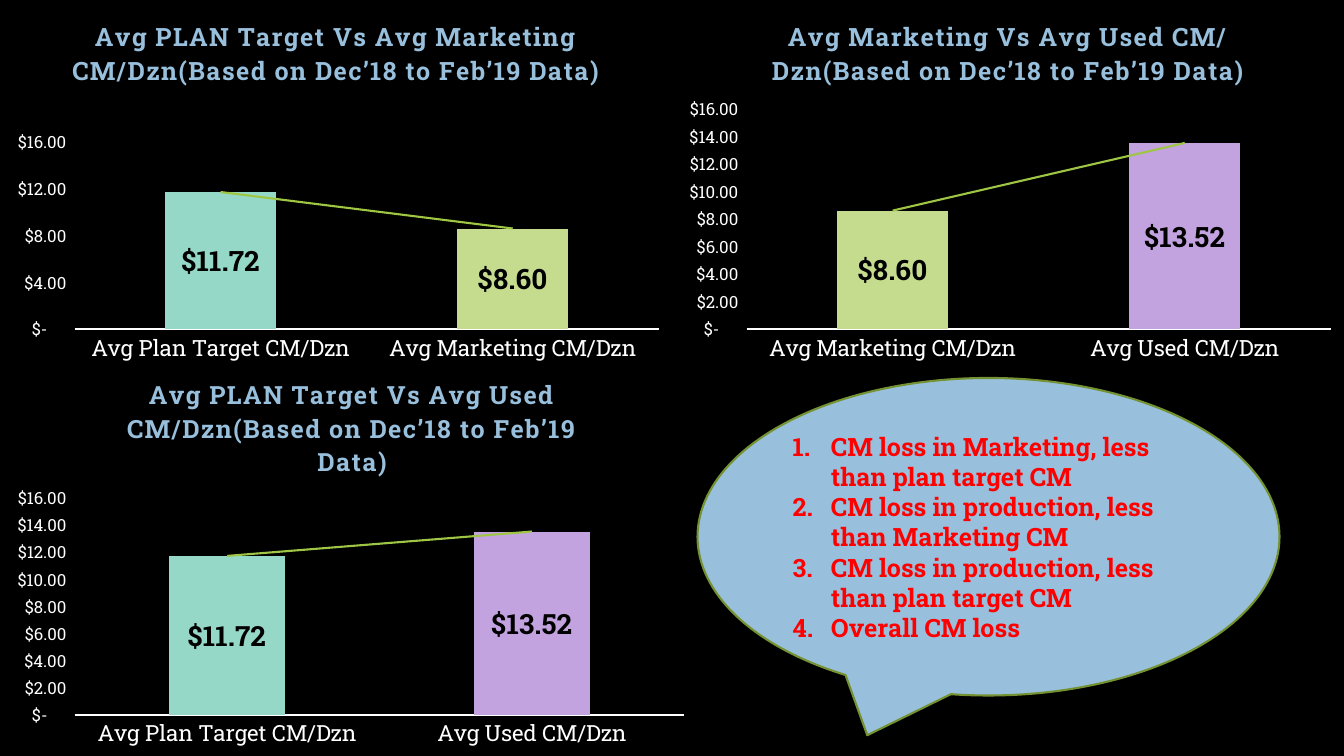
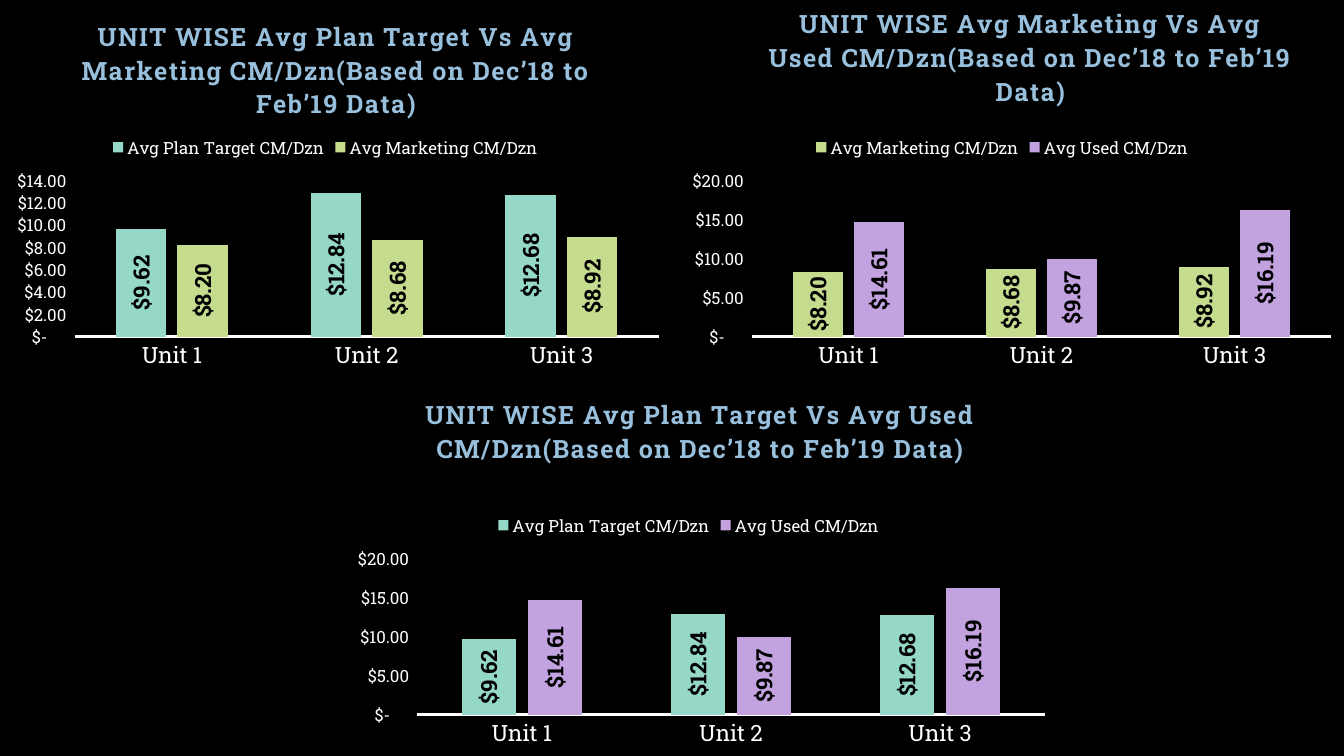
from pptx import Presentation
from pptx.chart.data import CategoryChartData as Data
from pptx.dml.color import RGBColor
from pptx.enum.chart import XL_CHART_TYPE as Kind, XL_LABEL_POSITION as Spot
from pptx.enum.chart import XL_LEGEND_POSITION as Side, XL_TICK_MARK as Tick
from pptx.enum.shapes import MSO_SHAPE as Form
from pptx.enum.text import MSO_ANCHOR as Anchor, PP_ALIGN as Align
from pptx.oxml import parse_xml
from pptx.oxml.ns import nsdecls, qn
from pptx.util import Inches, Pt

WIDE, HIGH = 13.33, 7.5
MONEY = r'_("$"* #,##0.00_);_("$"* \(#,##0.00\);_("$"* "-"??_);_(@_)'

# Measures: one colour and one name each
PLAN = ("Avg Plan Target CM/Dzn", "96D8C8")
MARKET = ("Avg Marketing CM/Dzn", "C5DC8F")
USED = ("Avg Used CM/Dzn", "C2A3DF")
MEAN = {PLAN: 11.72, MARKET: 8.6, USED: 13.52}
UNITS = ["Unit 1", "Unit 2", "Unit 3"]
SPLIT = {
    PLAN: (9.62, 12.84, 12.68),
    MARKET: (8.2, 8.68, 8.92),
    USED: (14.61, 9.87, 16.19),
}
SPAN = "CM/Dzn(Based on Dec’18 to Feb’19 Data)"


def rgb(code):
    return RGBColor.from_string(code)


def put(item, **vals):
    for key, val in vals.items():
        setattr(item, key, val)


def place(node, inner=False, **spots):
    """Fix the place of a chart part, in shares of the chart."""
    for old in node.findall(qn("c:layout")):
        node.remove(old)
    target = '<c:layoutTarget val="inner"/>' if inner else ""
    modes = "".join(f'<c:{key}Mode val="edge"/>' for key in "xy")
    sizes = "".join(f'<c:{key} val="{val:.4f}"/>' for key, val in spots.items())
    lay = parse_xml(f'<c:layout {nsdecls("c")}><c:manualLayout>{target}{modes}'
                    f'{sizes}</c:manualLayout></c:layout>')
    over = node.find(qn("c:overlay"))
    if over is None:
        node.insert(0, lay)
    else:
        over.addprevious(lay)


class Deck:
    FACE = "Roboto Slab"
    BACK, TEXT, DARK = "000000", "FFFFFF", "000000"
    SKY, LEAF, MOSS, ALARM = "98C0DD", "9EC544", "759232", "FF0000"
    LEFT, RIGHT, FOOT = 0.74, 0.13, 0.41   # plot margins in inches

    def __init__(self):
        self.prs = Presentation()
        put(self.prs, slide_width=Inches(WIDE), slide_height=Inches(HIGH))
        self.slide = None

    def page(self):
        self.slide = self.prs.slides.add_slide(self.prs.slide_layouts[6])
        fill = self.slide.background.fill
        fill.solid()
        fill.fore_color.rgb = rgb(self.BACK)

    def box(self, x, y, w, h):
        """Turn percent of the slide into lengths."""
        return [Inches(part * full / 100) for part, full
                in zip((x, y, w, h), (WIDE, HIGH, WIDE, HIGH))]

    def font(self, font, size, color, bold=False):
        put(font, name=self.FACE, size=Pt(size), bold=bold)
        font.color.rgb = rgb(color)

    def stroke(self, line, color, width=1.5):
        line.color.rgb = rgb(color)
        line.width = Pt(width)

    def paint(self, item, color):
        fill = item.format.fill
        fill.solid()
        fill.fore_color.rgb = rgb(color)

    def title(self, chart, text, spot):
        chart.has_title = True
        head = chart.chart_title
        head.include_in_layout = False
        frame = head.text_frame
        frame.text = text
        run = frame.paragraphs[0].runs[0]
        self.font(run.font, 18, self.SKY, True)
        run.font._element.set("spc", "100")
        if spot:
            place(head._element, x=spot[0], y=spot[1])

    def axes(self, chart, top, step):
        cats, vals = chart.category_axis, chart.value_axis
        for axis, size in ((cats, 16), (vals, 12)):
            put(axis, major_tick_mark=Tick.NONE, minor_tick_mark=Tick.NONE,
                has_major_gridlines=False)
            self.font(axis.tick_labels.font, size, self.TEXT)
        put(vals, minimum_scale=0, maximum_scale=top, major_unit=step)
        put(vals.tick_labels, number_format=MONEY,
            number_format_is_linked=False)
        self.stroke(cats.format.line, self.TEXT)
        vals.format.line.fill.background()

    def labels(self, row, size, turn):
        tags = row.data_labels
        put(tags, show_value=True, position=Spot.CENTER,
            number_format=MONEY, number_format_is_linked=False)
        self.font(tags.font, size, self.DARK, True)
        if turn:
            body = tags._element.find(".//" + qn("a:bodyPr"))
            put_xml = {"rot": "-5400000", "vert": "horz"}
            for key, val in put_xml.items():
                body.set(key, val)

    def trend(self, row):
        line = parse_xml(
            f'<c:trendline {nsdecls("c", "a")}><c:spPr><a:ln w="{Pt(1.5)}">'
            f'<a:solidFill><a:srgbClr val="{self.LEAF}"/></a:solidFill></a:ln>'
            '</c:spPr><c:trendlineType val="linear"/><c:dispRSqr val="0"/>'
            '<c:dispEq val="0"/></c:trendline>')
        row._element.find(qn("c:cat")).addprevious(line)

    def legend(self, chart, left):
        chart.has_legend = True
        put(chart.legend, position=Side.TOP, include_in_layout=False)
        self.font(chart.legend.font, 12, self.TEXT)
        place(chart.legend._element, x=left, y=0.35)

    def chart(self, area, text, cats, rows, top, step, head, spot):
        """Add a column chart whose plot starts `head` inches down."""
        data = Data(number_format=MONEY)
        data.categories = cats
        for name, vals in rows:
            data.add_series(name, vals)
        kind = Kind.COLUMN_CLUSTERED
        chart = self.slide.shapes.add_chart(kind, *self.box(*area), data).chart
        self.font(chart.font, 10, self.TEXT)
        chart.has_legend = False
        self.title(chart, text, spot)
        self.axes(chart, top, step)
        plot = chart.plots[0]
        put(plot, gap_width=164, overlap=-22, vary_by_categories=False)
        wide, high = area[2] * WIDE / 100, area[3] * HIGH / 100
        place(plot._element.getparent(), inner=True,
              x=self.LEFT / wide, y=head / high,
              w=1 - (self.LEFT + self.RIGHT) / wide,
              h=1 - (head + self.FOOT) / high)
        return chart

    def pair(self, area, text, duo, step, head, spot=None):
        """Compare two means, with a trend line."""
        rows = [("Series 1", [MEAN[one] for one in duo])]
        chart = self.chart(area, f"{text} {SPAN}", [one[0] for one in duo],
                           rows, 16, step, head, spot)
        row = chart.plots[0].series[0]
        for num, (_, color) in enumerate(duo):
            self.paint(row.points[num], color)
        self.labels(row, 20, False)
        self.trend(row)

    def units(self, area, text, duo, top, step, left, spot=None):
        """Compare two measures unit by unit, with a legend."""
        rows = [(one[0], SPLIT[one]) for one in duo]
        chart = self.chart(area, f"UNIT WISE {text} {SPAN}", UNITS,
                           rows, top, step, 1.79, spot)
        for row, (_, color) in zip(chart.plots[0].series, duo):
            self.paint(row, color)
            self.labels(row, 16, True)
        self.legend(chart, left)

    def callout(self, area, lines):
        form = self.slide.shapes.add_shape(Form.OVAL_CALLOUT, *self.box(*area))
        form.shadow.inherit = False
        form.fill.solid()
        form.fill.fore_color.rgb = rgb(self.SKY)
        self.stroke(form.line, self.MOSS)
        frame = form.text_frame
        put(frame, word_wrap=True, vertical_anchor=Anchor.MIDDLE)
        frame.text = "\n".join(lines)
        dent = Inches(0.38)
        for para in frame.paragraphs:
            para.alignment = Align.LEFT
            self.font(para.runs[0].font, 18, self.ALARM, True)
            props = para._p.get_or_add_pPr()
            props.set("marL", str(dent))
            props.set("indent", str(-dent))
            props.append(parse_xml(
                f'<a:buFont {nsdecls("a")} typeface="+mj-lt"/>'))
            props.append(parse_xml(
                f'<a:buAutoNum {nsdecls("a")} type="arabicPeriod"/>'))


def main():
    deck = Deck()

    # Means of the three measures
    deck.page()
    deck.callout((51.9, 50, 43.3, 42), [
        "CM loss in Marketing, less than plan target CM",
        "CM loss in production, less than Marketing CM",
        "CM loss in production, less than plan target CM",
        "Overall CM loss",
    ])
    deck.pair((0, 0, 50, 49), "Avg PLAN Target Vs Avg Marketing",
              (PLAN, MARKET), 4, 1.41)
    deck.pair((50, 0, 50, 49), "Avg Marketing Vs Avg Used",
              (MARKET, USED), 2, 1.08)
    deck.pair((0, 51, 51.9, 49), "Avg PLAN Target Vs Avg Used",
              (PLAN, USED), 2, 1.1, (0.16, -0.05))

    # The same measures by unit
    deck.page()
    deck.units((0, 0, 50, 50), "Avg Plan Target Vs Avg Marketing",
               (PLAN, MARKET), 14, 2, 0.16)
    deck.units((50.4, 0, 49.6, 50), "Avg Marketing Vs Avg Used",
               (MARKET, USED), 20, 5, 0.2, (0.13, -0.02))
    deck.units((25.5, 50, 53.2, 50), "Avg Plan Target Vs Avg Used",
               (PLAN, USED), 20, 5, 0.21)

    deck.prs.save("out.pptx")


if __name__ == "__main__":
    main()
